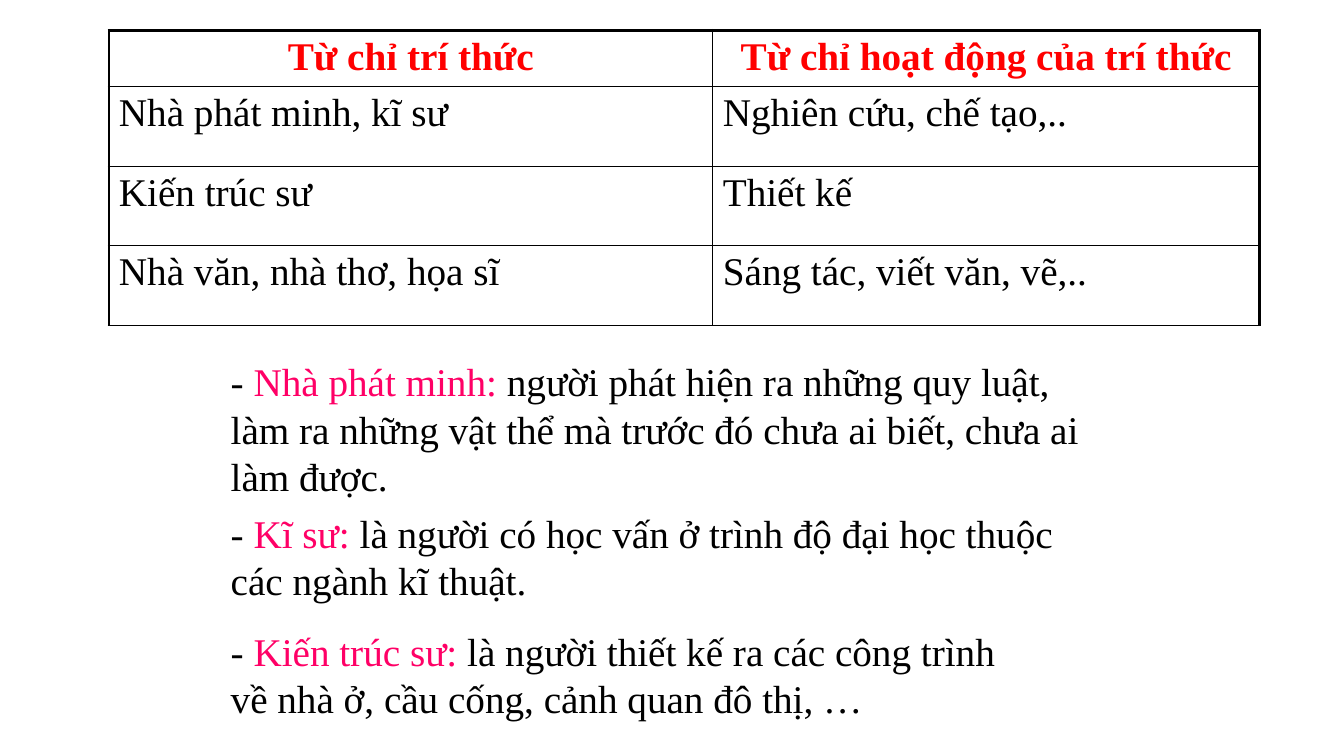
from dataclasses import dataclass

from lxml.etree import SubElement
from pptx import Presentation
from pptx.dml.color import RGBColor
from pptx.enum.text import MSO_AUTO_SIZE, PP_ALIGN
from pptx.oxml.ns import qn
from pptx.util import Inches, Pt


@dataclass(frozen=True)
class Theme:
    """Colours, type and line widths of the slide."""
    font: str = "Times New Roman"
    size: int = 28
    ink: str = "000000"
    heading: str = "FF0000"
    term: str = "FF0066"
    thin: float = 1
    thick: float = 2.25


THEME = Theme()

WORD_ROWS = [
    ("Từ chỉ trí thức", "Từ chỉ hoạt động của trí thức"),
    ("Nhà phát minh, kĩ sư", "Nghiên cứu, chế tạo,.."),
    ("Kiến trúc sư", "Thiết kế"),
    ("Nhà văn, nhà thơ, họa sĩ", "Sáng tác, viết văn, vẽ,.."),
]
COLUMN_WIDTHS = (5.99, 5.42)
HEADER_HEIGHT, ROW_HEIGHT = 0.56, 0.79

DEFINITIONS = [
    (3.5, 8.67, 1.51, "Nhà phát minh: ",
     "người phát hiện ra những quy luật, làm ra những vật thể mà trước đó "
     "chưa ai biết, chưa ai làm được."),
    (5, 8.79, 1.04, "Kĩ sư: ",
     "là người có học vấn ở trình độ đại học thuộc các ngành kĩ thuật."),
    (6.17, 7.97, 1.04, "Kiến trúc sư: ",
     "là người thiết kế ra các công trình về nhà ở, cầu cống, "
     "cảnh quan đô thị, …"),
]


def add_text(paragraph, text, color=THEME.ink, bold=False):
    """Append one formatted run to a paragraph."""
    run = paragraph.add_run()
    run.text = text
    run.font.name = THEME.font
    run.font.size = Pt(THEME.size)
    run.font.bold = bold
    run.font.color.rgb = RGBColor.from_string(color)


def set_borders(cell, **widths):
    """Draw the cell's borders, with widths in points by side L, R, T, B."""
    properties = cell._tc.get_or_add_tcPr()
    for index, (side, width) in enumerate(widths.items()):
        border = SubElement(properties, qn(f"a:ln{side}"), w=str(Pt(width)))
        fill = SubElement(border, qn("a:solidFill"))
        SubElement(fill, qn("a:srgbClr"), val=THEME.ink)
        properties.insert(index, border)


def add_word_table(slide, left, top):
    """Place the table of words with its top left corner at the given point."""
    height = HEADER_HEIGHT + ROW_HEIGHT * (len(WORD_ROWS) - 1)
    words = slide.shapes.add_table(
        len(WORD_ROWS), len(COLUMN_WIDTHS), Inches(left), Inches(top),
        Inches(sum(COLUMN_WIDTHS)), Inches(height)).table
    words.first_row = words.horz_banding = False
    for column, width in zip(words.columns, COLUMN_WIDTHS):
        column.width = Inches(width)
    last = len(COLUMN_WIDTHS) - 1
    for r, entries in enumerate(WORD_ROWS):
        header = r == 0
        words.rows[r].height = Inches(HEADER_HEIGHT if header else ROW_HEIGHT)
        for c, entry in enumerate(entries):
            cell = words.cell(r, c)
            cell.fill.background()
            set_borders(cell,
                        L=THEME.thick if c == 0 else THEME.thin,
                        R=THEME.thick if c == last else THEME.thin,
                        T=THEME.thick if header else THEME.thin,
                        B=THEME.thin)
            paragraph = cell.text_frame.paragraphs[0]
            paragraph.alignment = PP_ALIGN.CENTER if header else PP_ALIGN.LEFT
            add_text(paragraph, entry, bold=header,
                     color=THEME.heading if header else THEME.ink)


def add_definition(slide, left, top, width, height, term, meaning):
    """Place a highlighted term and its meaning in the given box."""
    frame = slide.shapes.add_textbox(
        Inches(left), Inches(top), Inches(width), Inches(height)).text_frame
    frame.word_wrap = True
    frame.auto_size = MSO_AUTO_SIZE.SHAPE_TO_FIT_TEXT
    paragraph = frame.paragraphs[0]
    add_text(paragraph, "- ")
    add_text(paragraph, term, color=THEME.term)
    add_text(paragraph, meaning)


def main():
    """Build and save the slide."""
    deck = Presentation()
    deck.slide_width, deck.slide_height = Inches(13.33), Inches(7.5)
    slide = deck.slides.add_slide(deck.slide_layouts[6])
    add_word_table(slide, 1.08, 0.3)
    for definition in DEFINITIONS:
        add_definition(slide, 2.19, *definition)
    deck.save("out.pptx")


if __name__ == "__main__":
    main()
